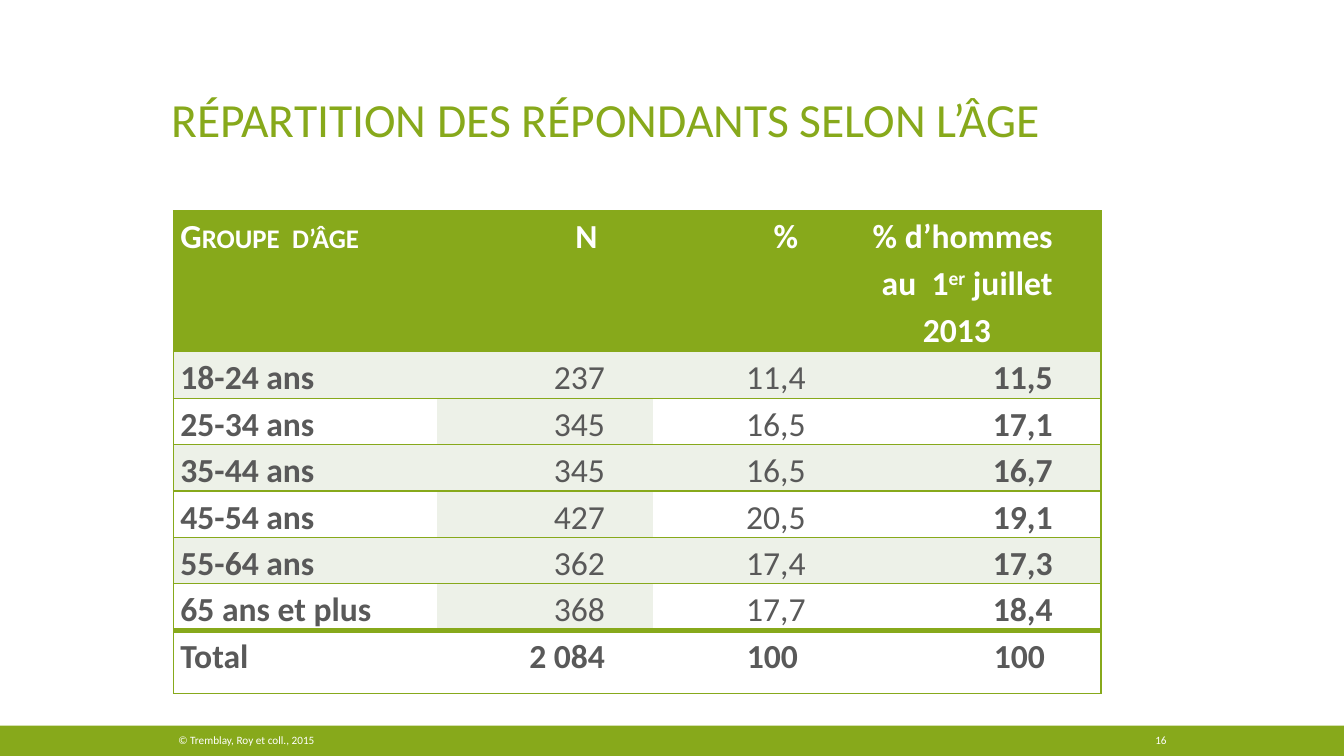
"""Build the slide on the spread of respondents by age."""
import pptx
import pptx.util
import pptx.dml.color
import pptx.enum.shapes
import pptx.enum.text
import pptx.oxml
import pptx.oxml.ns
from dataclasses import dataclass

Inches = pptx.util.Inches
Align = pptx.enum.text.PP_ALIGN
Anchor = pptx.enum.text.MSO_ANCHOR
RGB = pptx.dml.color.RGBColor.from_string


@dataclass(frozen=True)
class Theme:
    font: str = "Calibri"
    green: str = "87A91B"
    tint: str = "EDF1E8"
    white: str = "FFFFFF"
    grey: str = "595959"
    head: int = 34
    body: int = 24
    foot: int = 8


theme = Theme()


def write(par, text, size=theme.body, color=theme.grey, bold=False,
          align=Align.LEFT, lead=1.0, **extra):
    par.alignment = align
    par.line_spacing = lead
    run = par.add_run()
    run.text = text
    run.font.name = theme.font
    run.font.size = pptx.util.Pt(size)
    run.font.bold = bold
    run.font.color.rgb = RGB(color)
    for key, value in extra.items():
        run._r.get_or_add_rPr().set(key, value)


def edge(cell, side, width):
    fill = f'<a:solidFill><a:srgbClr val="{theme.green}"/></a:solidFill>' if width else "<a:noFill/>"
    space = pptx.oxml.ns.nsdecls("a")
    line = pptx.oxml.parse_xml(f'<a:ln{side} {space} w="{width * 12700}">{fill}</a:ln{side}>')
    props = cell._tc.get_or_add_tcPr()
    props.insert(len(props.xpath("a:lnL|a:lnR|a:lnT|a:lnB")), line)


deck = pptx.Presentation()
deck.slide_width = Inches(13.33)
deck.slide_height = Inches(7.5)
slide = deck.slides.add_slide(deck.slide_layouts[6])

band = slide.shapes.add_shape(
    pptx.enum.shapes.MSO_SHAPE.RECTANGLE, 0, Inches(7.2), deck.slide_width, Inches(0.3))
band.shadow.inherit = False
band.fill.solid()
band.fill.fore_color.rgb = RGB(theme.green)
band.line.fill.background()

labels = [
    ((1.6, 0.27, 10, 1.25), "RÉPARTITION DES RÉPONDANTS SELON L’ÂGE", Anchor.BOTTOM,
     dict(size=theme.head, color=theme.green, lead=0.9)),
    ((1.67, 7.22, 7.1, 0.25), "© Tremblay, Roy et coll., 2015", Anchor.MIDDLE,
     dict(size=theme.foot, color=theme.white)),
    ((10.82, 7.22, 0.85, 0.25), "16", Anchor.MIDDLE,
     dict(size=theme.foot, color=theme.white, align=Align.RIGHT)),
]
for place, text, anchor, style in labels:
    frame = slide.shapes.add_textbox(*map(Inches, place)).text_frame
    frame.word_wrap = True
    frame.vertical_anchor = anchor
    write(frame.paragraphs[0], text, **style)

rows = [
    ("Groupe  d’âge", "N ", "% ", "% d’hommes au  1"),
    ("18-24 ans", "237", "11,4", "11,5"),
    ("25-34 ans", "345", "16,5", "17,1"),
    ("35-44 ans", "345", "16,5", "16,7"),
    ("45-54 ans", "427", "20,5", "19,1"),
    ("55-64 ans", "362", "17,4", "17,3"),
    ("65 ans et plus", "368", "17,7", "18,4"),
    ("Total", "2 084", "100 ", "100 "),
]
widths = [2.61, 2.15, 1.99, 2.45]
heights = [1.4] + [0.46] * 6 + [0.63]
last = len(rows) - 1
table = slide.shapes.add_table(
    len(rows), len(widths), Inches(1.72), Inches(2.09),
    Inches(sum(widths)), Inches(sum(heights))).table
table.first_row = table.horz_banding = False
for col, width in zip(table.columns, widths):
    col.width = Inches(width)

for r, values in enumerate(rows):
    table.rows[r].height = Inches(heights[r])
    for c, text in enumerate(values):
        cell = table.cell(r, c)
        cell.margin_left = Inches(0.07)
        cell.margin_right = Inches(0.48 if c else 0.07)
        cell.margin_top = cell.margin_bottom = 0
        tinted = r < last and (r % 2 or c == 1)
        cell.fill.solid()
        cell.fill.fore_color.rgb = RGB(
            theme.green if r == 0 else theme.tint if tinted else theme.white)
        edge(cell, "L", int(c == 0))
        edge(cell, "R", int(c == 3))
        edge(cell, "T", 4 if r == last else 1)
        edge(cell, "B", 4 if r == last - 1 else 1)
        style = dict(color=theme.grey if r else theme.white,
                     bold=r in (0, last) or c in (0, 3),
                     align=Align.RIGHT if c else Align.LEFT, lead=1.15)
        caps = {"cap": "small"} if r == c == 0 else {}
        write(cell.text_frame.paragraphs[0], text, **style, **caps)

date = table.cell(0, 3).text_frame
style = dict(color=theme.white, bold=True, lead=1.15)
write(date.paragraphs[0], "er", align=Align.RIGHT, baseline="30000", **style)
write(date.paragraphs[0], " juillet", align=Align.RIGHT, **style)
write(date.add_paragraph(), "2013", align=Align.CENTER, **style)

deck.save("out.pptx")
